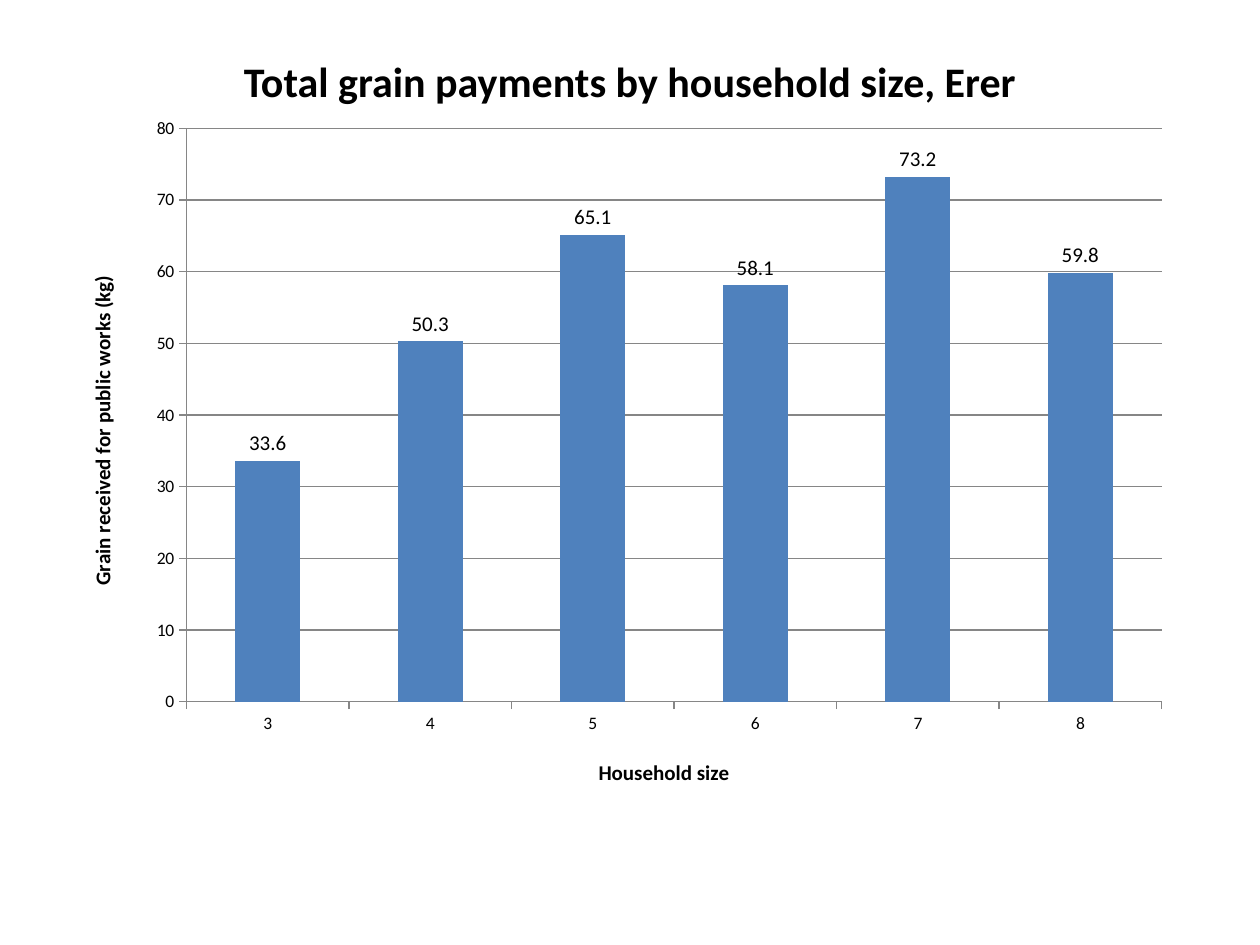
from lxml import etree
from pptx import Presentation
from pptx import util as u
from pptx.chart.data import CategoryChartData
from pptx.dml.color import RGBColor
from pptx.enum import chart as ch, text
from pptx.oxml import ns

HUES = {"ink": "000000", "bar": "4F81BD", "line": "868686", "paper": "FFFFFF"}
FACE = "Calibri"
GRAIN = {"3": 33.6, "4": 50.3, "5": 65.1, "6": 58.1, "7": 73.2, "8": 59.8}


def hue(name):
    return RGBColor.from_string(HUES[name])


def put(item, **vals):
    for key, val in vals.items():
        setattr(item, key, val)


def place(node, index, **vals):
    """Fix the layout of a chart part, in shares of the chart's size."""
    for old in node.findall(ns.qn("c:layout")):
        node.remove(old)
    box = etree.Element(ns.qn("c:layout"))
    form = etree.SubElement(box, ns.qn("c:manualLayout"))
    for key, val in vals.items():
        etree.SubElement(form, ns.qn("c:" + key)).set("val", str(val))
    node.insert(index, box)


class Deck:
    def __init__(self, wide, high):
        self.prs = Presentation()
        put(self.prs, slide_width=u.Inches(wide), slide_height=u.Inches(high))
        self.slide = self.prs.slides.add_slide(self.prs.slide_layouts[5])
        fill = self.slide.background.fill
        fill.solid()
        fill.fore_color.rgb = hue("paper")

    def area(self, left, top, wide, high):
        """Turn shares of the slide's size into lengths."""
        w, h = self.prs.slide_width, self.prs.slide_height
        return [int(v) for v in (left * w, top * h, wide * w, high * h)]

    def font(self, font, size, bold=False):
        put(font, name=FACE, size=u.Pt(size), bold=bold)
        font.color.rgb = hue("ink")

    def line(self, form):
        form.line.color.rgb = hue("line")
        form.line.width = u.Pt(0.75)

    def title(self, words, *share):
        shape = self.slide.shapes.title
        put(shape, **dict(zip(("left", "top", "width", "height"), self.area(*share))))
        frame = shape.text_frame
        put(frame, text=words, vertical_anchor=text.MSO_ANCHOR.MIDDLE, word_wrap=True)
        para = frame.paragraphs[0]
        para.alignment = text.PP_ALIGN.CENTER
        self.font(para.runs[0].font, 24, True)

    def axis(self, axis, words, x, y):
        put(axis, major_tick_mark=ch.XL_TICK_MARK.OUTSIDE,
            minor_tick_mark=ch.XL_TICK_MARK.NONE)
        self.line(axis.format)
        self.font(axis.tick_labels.font, 10)
        name = axis.axis_title
        name.text_frame.text = words
        self.font(name.text_frame.paragraphs[0].runs[0].font, 12, True)
        place(name._element, 1, xMode="edge", yMode="edge", x=x, y=y)

    def bars(self, vals, *share):
        data = CategoryChartData()
        data.categories = list(vals)
        data.add_series("Series 1", list(vals.values()))
        kind = ch.XL_CHART_TYPE.COLUMN_CLUSTERED
        chart = self.slide.shapes.add_chart(kind, *self.area(*share), data).chart
        put(chart, has_legend=False, has_title=False)
        self.font(chart.font, 10)

        plot = chart.plots[0]
        put(plot, gap_width=150, vary_by_categories=False, has_data_labels=True)
        put(plot.data_labels, show_value=True,
            position=ch.XL_LABEL_POSITION.OUTSIDE_END)
        self.font(plot.data_labels.font, 12)
        fill = plot.series[0].format.fill
        fill.solid()
        fill.fore_color.rgb = hue("bar")

        put(chart.value_axis, minimum_scale=0, maximum_scale=80, major_unit=10,
            has_major_gridlines=True)
        self.line(chart.value_axis.major_gridlines.format)
        self.axis(chart.value_axis, "Grain received for public works (kg)", 0.03, 0.24)
        self.axis(chart.category_axis, "Household size", 0.48, 0.93)
        place(chart._chartSpace.chart.plotArea, 0, layoutTarget="inner",
              xMode="edge", yMode="edge", x=0.12, y=0.035, w=0.86, h=0.82)


def main():
    deck = Deck(10, 7.5)
    deck.title("Total grain payments by household size, Erer", 0.05, 0.04, 0.9, 0.09)
    deck.bars(GRAIN, 0.04, 0.11, 0.9, 0.74)
    deck.prs.save("out.pptx")


if __name__ == "__main__":
    main()
